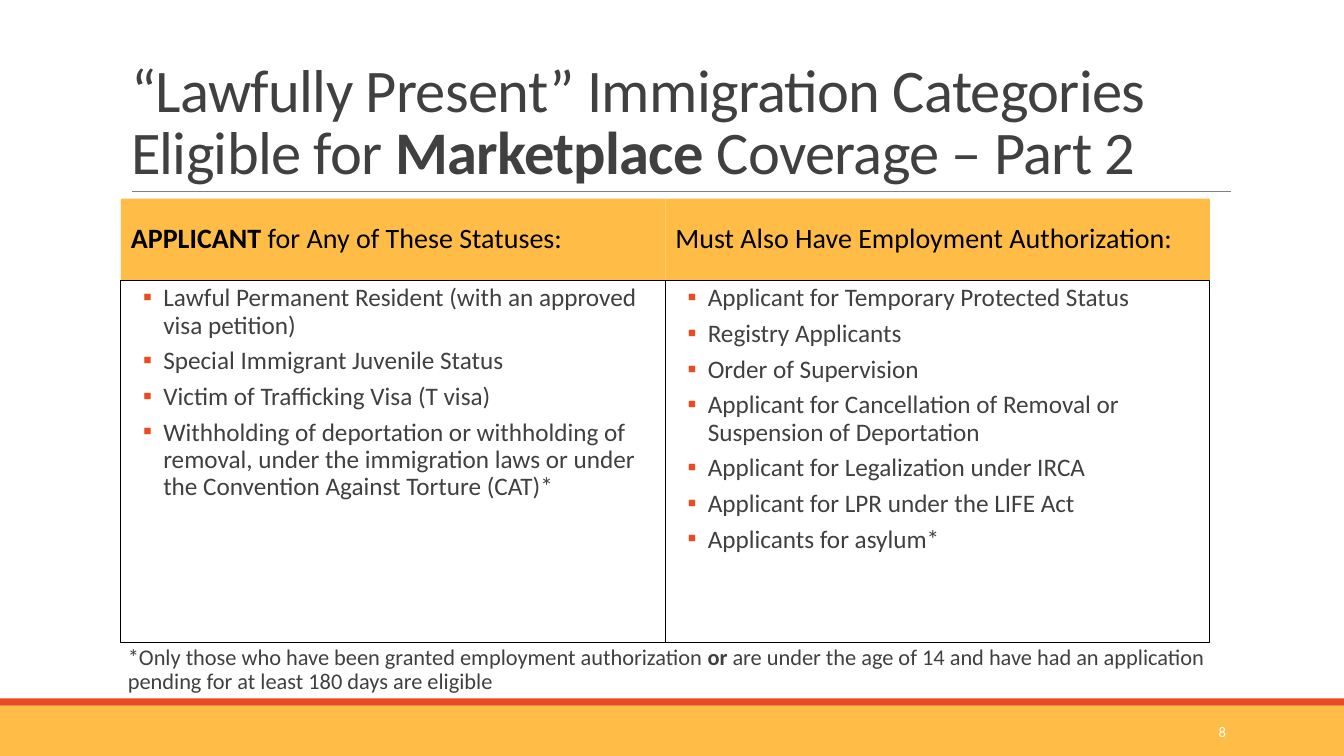
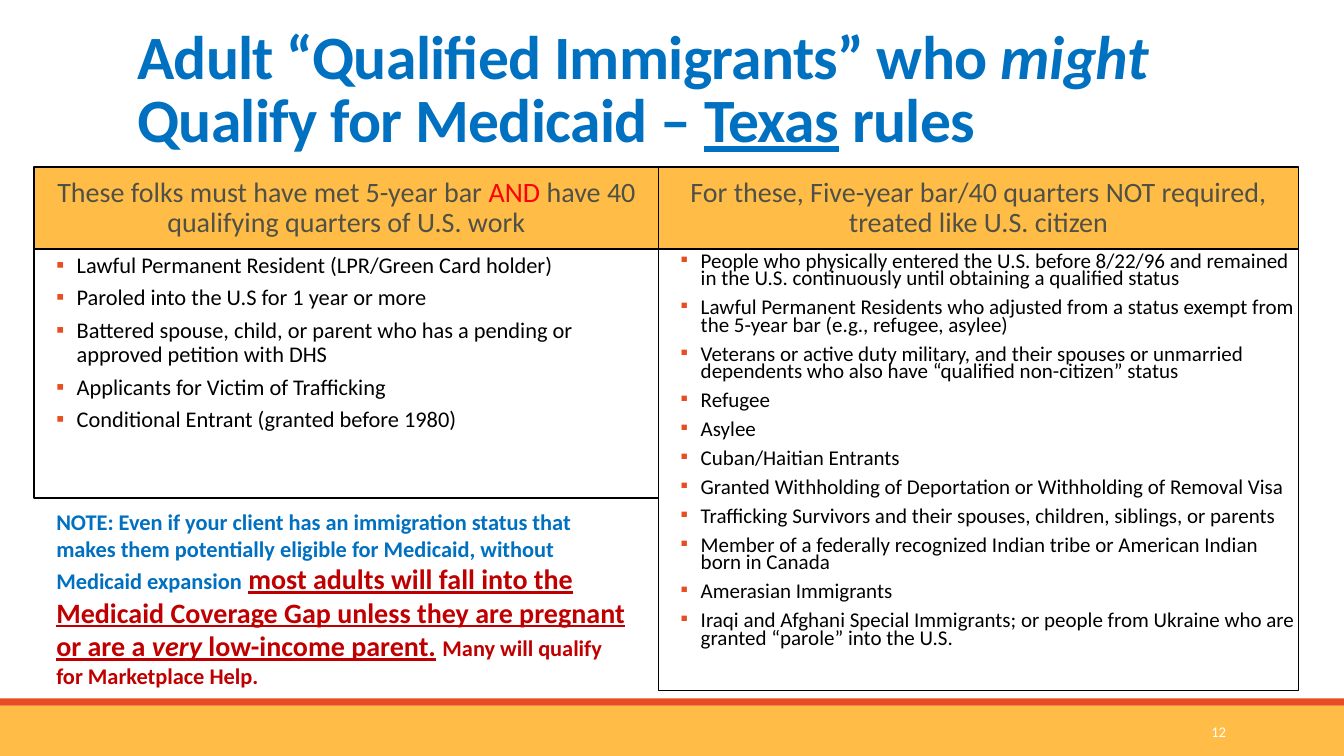
from lxml import etree
from pptx import Presentation
from pptx import util as u
from pptx.dml.color import RGBColor
from pptx.enum import shapes, text
from pptx.oxml.ns import qn

W, H = 13.33, 7.5
FONT = "Calibri"
GOLD, ORANGE, WHITE, BLACK = "FFBD47", "E84C22", "FFFFFF", "000000"
GREY, OLIVE, RULE = "404040", "505046", "808080"
BLUE, RED, DARK_RED = "0070C0", "FF0000", "C00000"
HEADER_H = 0.81
LEFT, CENTER, RIGHT = text.PP_ALIGN.LEFT, text.PP_ALIGN.CENTER, text.PP_ALIGN.RIGHT
TOP, MIDDLE, BOTTOM = text.MSO_ANCHOR.TOP, text.MSO_ANCHOR.MIDDLE, text.MSO_ANCHOR.BOTTOM


def rgb(value):
    return RGBColor.from_string(value)


def inches(*values):
    return [u.Inches(v) for v in values]


def add_runs(p, runs, size, color, bold=False, spacing=None):
    for words, extra in runs:
        r = p.add_run()
        r.text = words
        f = r.font
        f.name = FONT
        f.size = u.Pt(extra.get("size", size))
        f.color.rgb = rgb(extra.get("color", color))
        f.bold = extra.get("bold", bold)
        f.italic = extra.get("italic", False)
        f.underline = extra.get("underline", False)
        if spacing:
            r._r.get_or_add_rPr().set("spc", str(int(spacing * 100)))


def set_frame(tf, anchor=TOP, left=0.1, right=0.1):
    tf.word_wrap = True
    tf.auto_size = text.MSO_AUTO_SIZE.NONE
    tf.vertical_anchor = anchor
    tf.margin_left, tf.margin_right = inches(left, right)
    tf.margin_top = tf.margin_bottom = u.Inches(0.05)
    return tf


def set_indent(p, left, first=0):
    pPr = p._p.get_or_add_pPr()
    pPr.set("marL", str(u.Inches(left)))
    pPr.set("indent", str(u.Inches(first)))
    return pPr


def add_bullet(p):
    pPr = set_indent(p, 0.42, -0.2)
    clr = etree.SubElement(pPr, qn("a:buClr"))
    etree.SubElement(clr, qn("a:srgbClr")).set("val", ORANGE)
    etree.SubElement(pPr, qn("a:buFont")).set("typeface", FONT)
    etree.SubElement(pPr, qn("a:buChar")).set("char", "▪")


def add_rect(s, box, fill=None, line=None):
    sp = s.shapes.add_shape(shapes.MSO_SHAPE.RECTANGLE, *inches(*box))
    sp.shadow.inherit = False
    if fill:
        sp.fill.solid()
        sp.fill.fore_color.rgb = rgb(fill)
    else:
        sp.fill.background()
    if line:
        sp.line.color.rgb = rgb(BLACK)
        sp.line.width = u.Pt(line)
    else:
        sp.line.fill.background()
    return sp


def add_text(s, box, runs, size, color, align=LEFT, anchor=TOP, indent=0, spacing=1.0, bold=False):
    tf = set_frame(s.shapes.add_textbox(*inches(*box)).text_frame, anchor)
    p = tf.paragraphs[0]
    p.alignment = align
    p.line_spacing = spacing
    set_indent(p, indent)
    add_runs(p, runs, size, color, bold)


def add_slide(prs, number, title_box, title, size, color, bold=False):
    s = prs.slides.add_slide(prs.slide_layouts[5])
    add_rect(s, (0, 7, W, 0.5), GOLD)
    add_rect(s, (0, 6.93, W, 0.07), ORANGE)
    add_text(s, (10.83, 7.06, 1.43, 0.4), [(number, {})], 10.5, WHITE, RIGHT, MIDDLE)
    sp = s.shapes.title
    sp.left, sp.top, sp.width, sp.height = inches(*title_box)
    p = set_frame(sp.text_frame, BOTTOM).paragraphs[0]
    p.alignment = LEFT
    p.line_spacing = 0.85
    add_runs(p, title, size, color, bold, spacing=-0.5)
    return s


def add_rule(s, left, right, y):
    line = s.shapes.add_connector(shapes.MSO_CONNECTOR.STRAIGHT, *inches(left, y, right, y))
    line.line.color.rgb = rgb(RULE)
    line.line.width = u.Pt(0.5)
    etree.SubElement(line._element.spPr, qn("a:effectLst"))


def add_panel(s, box, header, items, size, color, header_color, align=LEFT,
              header_line=None, body_line=0.75, body_fill=None, spacing=0.9, after=4):
    x, y, w, h = box
    sp = add_rect(s, (x, y, w, HEADER_H), GOLD, header_line)
    p = set_frame(sp.text_frame, MIDDLE).paragraphs[0]
    p.alignment = align
    p.line_spacing = 0.9
    add_runs(p, header, 20, header_color)

    sp = add_rect(s, (x, y + HEADER_H, w, h - HEADER_H), body_fill, body_line)
    tf = set_frame(sp.text_frame, left=0, right=0)
    for i, item in enumerate(items):
        p = tf.add_paragraph() if i else tf.paragraphs[0]
        add_bullet(p)
        p.alignment = LEFT
        p.line_spacing = spacing
        p.space_before = u.Pt(2 if i else 0)
        p.space_after = u.Pt(after)
        add_runs(p, [(item, {})], size, color)


def marketplace_slide(prs):
    s = add_slide(prs, "8", (1.2, 0.31, 11, 1.59), [
        ("“Lawfully Present” Immigration Categories Eligible for ", {}),
        ("Marketplace", {"bold": True}),
        (" Coverage – Part 2", {}),
    ], 43.2, GREY)
    add_rule(s, 1.31, 12.21, 1.9)
    panels = [
        ([("APPLICANT", {"bold": True}), (" for Any of These Statuses:", {})], [
            "Lawful Permanent Resident (with an approved visa petition)",
            "Special Immigrant Juvenile Status",
            "Victim of Trafficking Visa (T visa)",
            "Withholding of deportation or withholding of removal, under the immigration laws "
            "or under the Convention Against Torture (CAT)*",
        ]),
        ([("Must Also Have Employment Authorization:", {})], [
            "Applicant for Temporary Protected Status",
            "Registry Applicants",
            "Order of Supervision",
            "Applicant for Cancellation of Removal or Suspension of Deportation",
            "Applicant for Legalization under IRCA",
            "Applicant for LPR under the LIFE Act",
            "Applicants for asylum*",
        ]),
    ]
    width = 5.4
    for i, (header, items) in enumerate(panels):
        add_panel(s, (1.2 + i * width, 1.97, width, 4.4), header, items, 18, GREY, BLACK)
    add_text(s, (1.07, 6.36, 11.06, 0.59), [
        ("*Only those who have been granted employment authorization ", {}),
        ("or", {"bold": True}),
        (" are under the age of 14 and have had an application pending for at least "
         "180 days are eligible", {}),
    ], 16, GREY, indent=0.1, spacing=0.9)


def medicaid_slide(prs):
    s = add_slide(prs, "12", (1.26, 0, 11, 1.59), [
        ("Adult “Qualified Immigrants” who ", {}),
        ("might", {"italic": True}),
        (" Qualify for Medicaid – ", {}),
        ("Texas", {"underline": True}),
        (" rules", {}),
    ], 44, BLUE, bold=True)
    style = dict(color=BLACK, header_color=OLIVE, align=CENTER,
                 header_line=1.25, body_line=1.25, body_fill=WHITE)
    left, top, split, right = 0.34, 1.66, 6.53, 12.88
    add_panel(s, (left, top, split - left, 3.28), [
        ("These folks must have met 5-year bar ", {}),
        ("AND ", {"color": RED}),
        ("have 40 qualifying quarters of U.S. work", {}),
    ], [
        "Lawful Permanent Resident (LPR/Green Card holder)",
        "Paroled into the U.S for 1 year or more",
        "Battered spouse, child, or parent who has a pending or approved petition with DHS",
        "Applicants for Victim of Trafficking",
        "Conditional Entrant (granted before 1980)",
    ], size=16, **style)
    add_panel(s, (split, top, right - split, 5.19), [
        ("For these, Five-year bar/40 quarters NOT required, treated like U.S. citizen", {}),
    ], [
        "People who physically entered the U.S. before 8/22/96 and remained in the U.S. "
        "continuously until obtaining a qualified status",
        "Lawful Permanent Residents who adjusted from a status exempt from the 5-year bar "
        "(e.g., refugee, asylee)",
        "Veterans or active duty military, and their spouses or unmarried dependents who "
        "also have “qualified non-citizen” status",
        "Refugee",
        "Asylee",
        "Cuban/Haitian Entrants",
        "Granted Withholding of Deportation or Withholding of Removal Visa",
        "Trafficking Survivors and their spouses, children, siblings, or parents",
        "Member of a federally recognized Indian tribe or American Indian born in Canada",
        "Amerasian Immigrants",
        "Iraqi and Afghani Special Immigrants; or people from Ukraine who are granted "
        "“parole” into the U.S.",
    ], size=15, spacing=0.7, after=6, **style)
    warning = {"size": 20, "color": DARK_RED, "underline": True}
    add_text(s, (0.45, 4.99, 5.88, 1.92), [
        ("NOTE: Even if your client has an immigration status that makes them potentially "
         "eligible for Medicaid, without Medicaid expansion", {}),
        (" ", {"size": 20}),
        ("most adults will fall into the Medicaid Coverage Gap unless they are pregnant "
         "or are a ", warning),
        ("very ", {**warning, "italic": True}),
        ("low-income parent.", warning),
        (" ", {"size": 20}),
        ("Many will qualify for Marketplace Help.", {"color": DARK_RED}),
    ], 16, BLUE, indent=0.01, bold=True)


def main():
    prs = Presentation()
    prs.slide_width, prs.slide_height = inches(W, H)
    marketplace_slide(prs)
    medicaid_slide(prs)
    prs.save("out.pptx")


if __name__ == "__main__":
    main()
